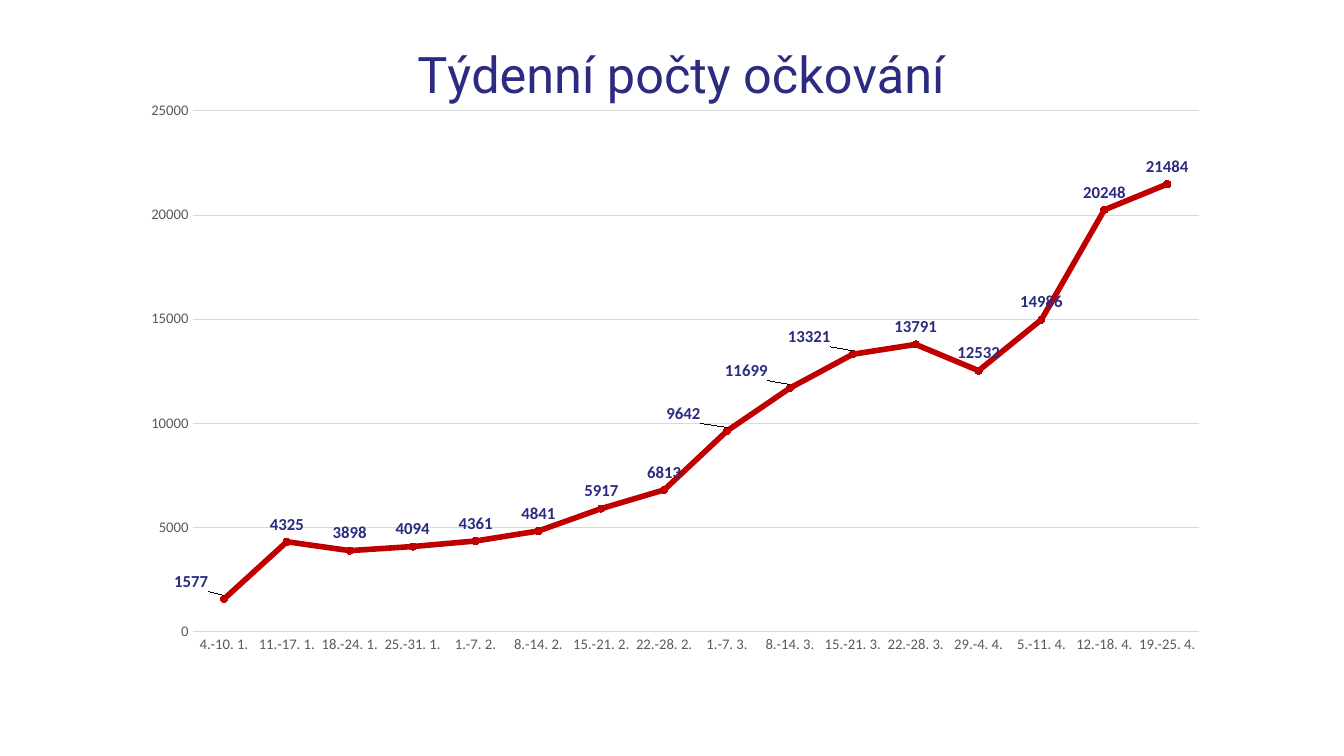
from lxml import etree
from pptx import Presentation
from pptx.chart.data import CategoryChartData as ChartData
from pptx.dml.color import RGBColor
from pptx.enum.chart import XL_CHART_TYPE as Kind, XL_LABEL_POSITION as Place
from pptx.enum.chart import XL_MARKER_STYLE as Mark, XL_TICK_MARK as Tick
from pptx.oxml.ns import qn
from pptx.util import Inches, Pt

NAVY, RED, GRAY, PALE = "2B2B82", "C00000", "595959", "D9D9D9"
WEEKS = {
    "4.-10. 1.": 1577, "11.-17. 1.": 4325, "18.-24. 1.": 3898,
    "25.-31. 1.": 4094, "1.-7. 2.": 4361, "8.-14. 2.": 4841,
    "15.-21. 2.": 5917, "22.-28. 2.": 6813, "1.-7. 3.": 9642,
    "8.-14. 3.": 11699, "15.-21. 3.": 13321, "22.-28. 3.": 13791,
    "29.-4. 4.": 12532, "5.-11. 4.": 14986, "12.-18. 4.": 20248,
    "19.-25. 4.": 21484,
}
# Leftward label moves, as shares of the chart width
MOVES = {0: -0.03, 8: -0.04, 9: -0.04, 10: -0.04}
LEFT, WIDE, HIGH = 1.28, 10.83, 6.63


def style(font, size, color, name="Calibri", bold=False):
    font.size, font.name, font.bold = Pt(size), name, bold
    font.color.rgb = RGBColor.from_string(color)


def place(parent, index, **parts):
    """Put a manual chart layout at the given child index."""
    for old in parent.findall(qn("c:layout")):
        parent.remove(old)
    layout = etree.Element(qn("c:layout"))
    manual = etree.SubElement(layout, qn("c:manualLayout"))
    for key, value in parts.items():
        etree.SubElement(manual, qn(f"c:{key}")).set("val", str(value))
    parent.insert(index, layout)


deck = Presentation()
deck.slide_width, deck.slide_height = Inches(13.33), Inches(7.5)
slide = deck.slides.add_slide(deck.slide_layouts[6])

data = ChartData()
data.categories = list(WEEKS)
data.add_series("Series 1", list(WEEKS.values()))
chart = slide.shapes.add_chart(
    Kind.LINE_MARKERS, Inches(LEFT), Inches(0), Inches(WIDE), Inches(HIGH), data
).chart
chart.has_legend = False
style(chart.font, 10, "000000")

# Title
chart.has_title = True
title = chart.chart_title
head = title.text_frame.paragraphs[0].add_run()
head.text = "Týdenní počty očkování"
style(head.font, 36, NAVY, "Roboto")
place(title._element, 1, xMode="edge", yMode="edge",
      x=(4.05 - LEFT) / WIDE, y=0.31 / HIGH)

# Plot area and axes
place(chart._chartSpace.chart.plotArea, 0, layoutTarget="inner",
      xMode="edge", yMode="edge", x=(1.91 - LEFT) / WIDE, y=1.1 / HIGH,
      w=9.98 / WIDE, h=5.17 / HIGH)
weeks, counts = chart.category_axis, chart.value_axis
for axis in (weeks, counts):
    axis.major_tick_mark = axis.minor_tick_mark = Tick.NONE
    style(axis.tick_labels.font, 10.5, GRAY)
counts.minimum_scale, counts.maximum_scale, counts.major_unit = 0, 25000, 5000
counts.format.line.fill.background()
for line in (weeks.format.line, counts.major_gridlines.format.line):
    line.width = Pt(0.75)
    line.color.rgb = RGBColor.from_string(PALE)

# Weekly line
chart.plots[0].vary_by_categories = False
series = chart.plots[0].series[0]
series.smooth = False
series.format.line.width = Pt(4)
series.marker.style, series.marker.size = Mark.CIRCLE, 5
series.marker.format.fill.solid()
for ink in (series.format.line.color, series.marker.format.fill.fore_color,
            series.marker.format.line.color):
    ink.rgb = RGBColor.from_string(RED)

# Value labels
labels = series.data_labels
labels.show_value, labels.position = True, Place.ABOVE
style(labels.font, 12, NAVY, bold=True)
for index, move in MOVES.items():
    label = series.points[index].data_label
    style(label.font, 12, NAVY, bold=True)
    label.position = Place.ABOVE
    place(labels._element.xpath(f"c:dLbl[c:idx/@val='{index}']")[0], 1,
          x=move, y=0)

deck.save("out.pptx")
